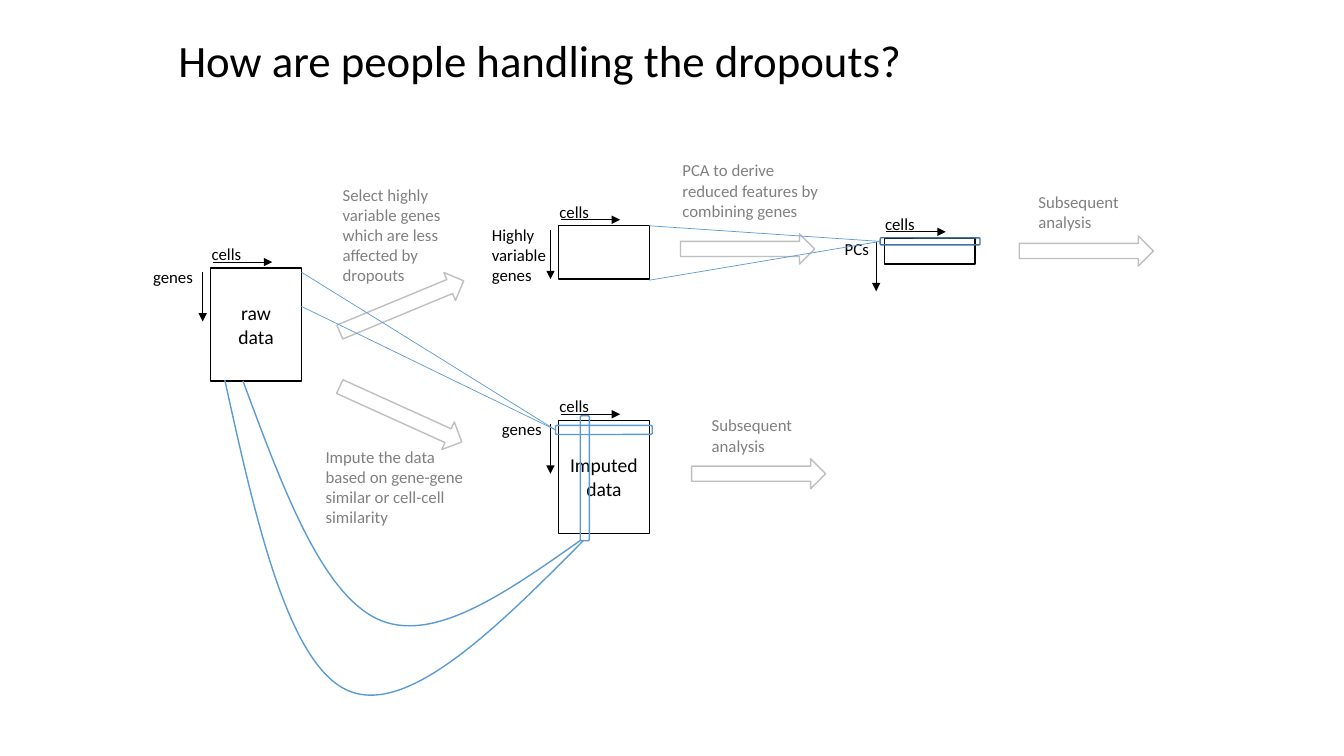
from dataclasses import dataclass
from typing import NamedTuple

from lxml.etree import SubElement
from pptx import Presentation
from pptx.dml.color import RGBColor
from pptx.enum.shapes import MSO_CONNECTOR, MSO_SHAPE as SHAPE
from pptx.enum.text import MSO_ANCHOR as ANCHOR, MSO_AUTO_SIZE as AUTO, PP_ALIGN as ALIGN
from pptx.oxml.ns import qn
from pptx.util import Emu, Pt

PX = 9144
FONT = "Calibri"
BLACK, GREY, SILVER = "000000", "808080", "BFBFBF"
WHITE, BLUE, DARK_BLUE = "FFFFFF", "5B9BD5", "43739E"


class Point(NamedTuple):
    x: int
    y: int


class Box(NamedTuple):
    x: int
    y: int
    w: int
    h: int


@dataclass
class Matrix:
    box: Box
    row_label: str
    row_box: Box
    row_wrap: bool
    text: str = ""


@dataclass
class Step:
    arrow: Box
    caption: str
    caption_box: Box
    rotation: float = 0


@dataclass
class Highlight:
    box: Box
    color: str
    sources: tuple[Point, ...] = ()
    rotation: float = 0


@dataclass
class Curve:
    start: Point
    controls: tuple[Point, ...]
    height: int


MATRICES = [
    Matrix(Box(554, 224, 90, 53), "Highly variable genes", Box(478, 218, 77, 71), True),
    Matrix(Box(877, 236, 90, 26), "PCs", Box(828, 232, 77, 30), True),
    Matrix(Box(209, 266, 90, 112), "genes", Box(142, 260, 60, 30), False, "raw\ndata"),
    Matrix(Box(554, 417, 90, 112), "genes", Box(488, 411, 60, 30), False, "Imputed\ndata"),
]
STEPS = [
    Step(Box(332, 289, 133, 30),
         "Select highly variable genes\nwhich are less affected by dropouts",
         Box(330, 178, 128, 111), 337.5),
    Step(Box(675, 232, 133, 30), "PCA to derive reduced features by combining genes",
         Box(667, 154, 160, 71)),
    Step(Box(331, 396, 133, 30),
         "Impute the data based on gene-gene similar or cell-cell similarity",
         Box(313, 438, 171, 91), 24.4),
    Step(Box(1011, 234, 133, 30), "Subsequent analysis", Box(1020, 185, 102, 50)),
    Step(Box(686, 455, 133, 30), "Subsequent analysis", Box(696, 407, 102, 50)),
]
HIGHLIGHTS = [
    Highlight(Box(873, 236, 99, 7), DARK_BLUE, (Point(644, 224), Point(644, 278))),
    Highlight(Box(551, 422, 96, 9), BLUE, (Point(299, 270), Point(299, 304))),
    Highlight(Box(518, 470, 124, 9), BLUE, rotation=90),
]
CURVES = [
    Curve(Point(241, 378), (Point(280, 483), Point(318, 587), Point(374, 614),
                            Point(429, 640), Point(502, 588), Point(576, 536)), 243),
    Curve(Point(223, 377), (Point(254, 518), Point(286, 659), Point(345, 685),
                            Point(404, 711), Point(492, 624), Point(579, 536)), 313),
]


def px(n: float) -> Emu:
    return Emu(round(n * PX))


def rgb(color: str) -> RGBColor:
    return RGBColor.from_string(color)


def write(tf, text: str, size: int, color: str) -> None:
    tf.text = text
    for p in tf.paragraphs:
        for r in p.runs:
            r.font.name = FONT
            r.font.size = Pt(size)
            r.font.color.rgb = rgb(color)


def outline(s, color: str, width: float) -> None:
    s.line.color.rgb = rgb(color)
    s.line.width = Pt(width)


def add_text(slide, box: Box, text: str, size: int = 12, color: str = BLACK, wrap: bool = True):
    tf = slide.shapes.add_textbox(*map(px, box)).text_frame
    tf.word_wrap = wrap
    tf.auto_size = AUTO.SHAPE_TO_FIT_TEXT
    write(tf, text, size, color)
    return tf


def add_box(slide, kind: SHAPE, box: Box, line: str, fill: str = "", rotation: float = 0):
    s = slide.shapes.add_shape(kind, *map(px, box))
    s.shadow.inherit = False
    s.rotation = rotation
    if fill:
        s.fill.solid()
        s.fill.fore_color.rgb = rgb(fill)
    else:
        s.fill.background()
    outline(s, line, 1)
    return s


def add_line(slide, start: Point, end: Point, color: str, arrow: bool = False):
    s = slide.shapes.add_connector(MSO_CONNECTOR.STRAIGHT, *map(px, start + end))
    outline(s, color, 0.5)
    if arrow:
        SubElement(s.line._get_or_add_ln(), qn("a:tailEnd"), type="triangle")
    SubElement(s._element.spPr, qn("a:effectLst"))
    return s


def draw_title(slide) -> None:
    tf = add_text(slide, Box(167, 0, 1000, 125), "How are people handling the dropouts?", 32)
    tf.auto_size = AUTO.NONE
    tf.vertical_anchor = ANCHOR.MIDDLE
    tf.paragraphs[0].line_spacing = 0.9


def draw_step(slide, step: Step) -> None:
    add_box(slide, SHAPE.RIGHT_ARROW, step.arrow, SILVER, WHITE, step.rotation)
    add_text(slide, step.caption_box, step.caption, color=GREY)


def draw_matrix(slide, matrix: Matrix) -> None:
    x, y = matrix.box.x, matrix.box.y
    s = add_box(slide, SHAPE.RECTANGLE, matrix.box, BLACK)
    if matrix.text:
        tf = s.text_frame
        tf.vertical_anchor = ANCHOR.MIDDLE
        write(tf, matrix.text, 14, BLACK)
        for p in tf.paragraphs:
            p.alignment = ALIGN.CENTER
    add_text(slide, Box(x - 9, y - 29, 50, 30), "cells", wrap=False)
    add_text(slide, matrix.row_box, matrix.row_label, wrap=matrix.row_wrap)
    add_line(slide, Point(x + 2, y - 6), Point(x + 61, y - 6), BLACK, arrow=True)
    add_line(slide, Point(x - 8, y + 4), Point(x - 8, y + 53), BLACK, arrow=True)


def draw_highlight(slide, mark: Highlight) -> None:
    s = add_box(slide, SHAPE.ROUNDED_RECTANGLE, mark.box, mark.color, rotation=mark.rotation)
    target = Point(mark.box.x, mark.box.y + mark.box.h // 2)
    for source in mark.sources:
        add_line(slide, source, target, BLUE).end_connect(s, 1)


def draw_curve(slide, curve: Curve) -> None:
    builder = slide.shapes.build_freeform(*curve.start, scale=PX)
    builder.add_line_segments(curve.controls, close=False)
    s = builder.convert_to_shape()
    s.shadow.inherit = False
    s.fill.background()
    outline(s, BLUE, 1)
    s.height = px(curve.height)
    outline_path = next(s._element.iter(qn("a:path")))
    outline_path.set("h", str(curve.height))
    segments = outline_path.findall(qn("a:lnTo"))
    for i in range(0, len(segments), 3):
        bezier = SubElement(outline_path, qn("a:cubicBezTo"))
        for segment in segments[i:i + 3]:
            bezier.append(segment[0])
            outline_path.remove(segment)


def main() -> None:
    prs = Presentation()
    prs.slide_width, prs.slide_height = px(1333), px(750)
    slide = prs.slides.add_slide(prs.slide_layouts[6])
    draw_title(slide)
    for step in STEPS:
        draw_step(slide, step)
    for matrix in MATRICES:
        draw_matrix(slide, matrix)
    for mark in HIGHLIGHTS:
        draw_highlight(slide, mark)
    for curve in CURVES:
        draw_curve(slide, curve)
    prs.save("out.pptx")


if __name__ == "__main__":
    main()
